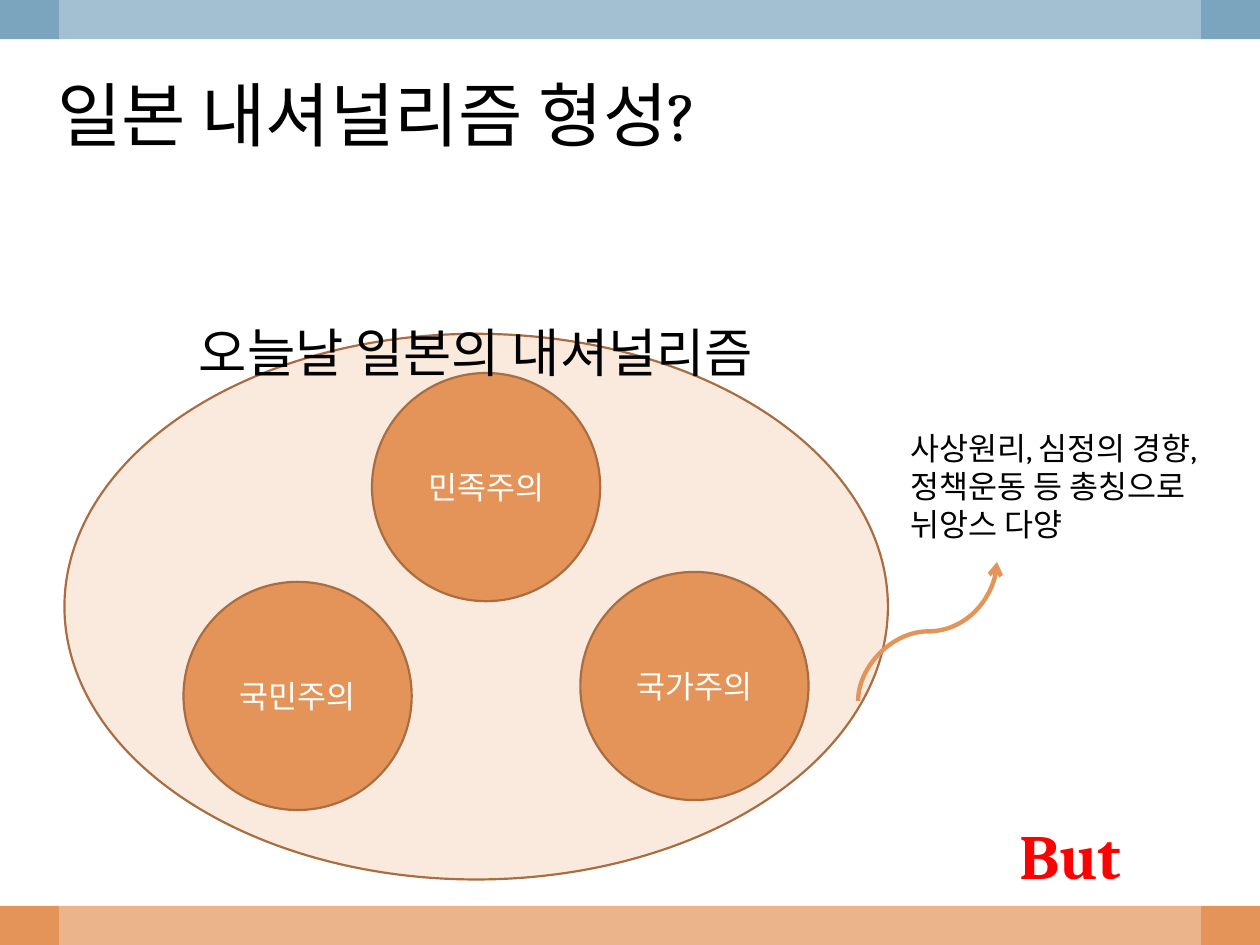
from pptx import Presentation
from pptx import util as u
from pptx.dml.color import RGBColor
from pptx.enum import shapes, text
from pptx.oxml.ns import qn
from lxml import etree

COLORS = {
    "orange": "E49458", "blue": "7BA5BE", "white": "FFFFFF", "black": "000000",
    "cream": "FAEADE", "brown": "A96D41", "red": "FF0000",
}
WIDTH, HEIGHT = 25.4, 19.05
BAND = 0.79
CIRCLE = 4.6


class SlideBuilder:
    """Holds the slide and its style; lengths are in centimetres."""
    font = "Cambria"

    def __init__(self, prs):
        self.s = prs.slides.add_slide(prs.slide_layouts[5])

    def color(self, name):
        return RGBColor.from_string(COLORS[name])

    def set_text(self, sp, words, size, color, align=text.PP_ALIGN.LEFT,
                 anchor=text.MSO_ANCHOR.TOP, bold=False):
        tf = sp.text_frame
        tf.text = words
        tf.word_wrap = True
        tf.auto_size = text.MSO_AUTO_SIZE.NONE
        tf.vertical_anchor = anchor
        p = tf.paragraphs[0]
        p.alignment = align
        font = p.runs[0].font
        font.name, font.size, font.bold = self.font, u.Pt(size), bold
        font.color.rgb = self.color(color)

    def title(self, words, x, y, w, h):
        sp = self.s.shapes.title
        self.s.shapes._spTree.append(sp._element)  # in front of the bands
        sp.left, sp.top, sp.width, sp.height = map(u.Cm, (x, y, w, h))
        self.set_text(sp, words, 40, "black")

    def textbox(self, words, x, y, w, h, size, color="black", **style):
        sp = self.s.shapes.add_textbox(*map(u.Cm, (x, y, w, h)))
        self.set_text(sp, words, size, color, **style)

    def shape(self, kind, x, y, w, h, fill, line=None):
        sp = self.s.shapes.add_shape(kind, *map(u.Cm, (x, y, w, h)))
        sp.shadow.inherit = False
        sp.fill.solid()
        sp.fill.fore_color.rgb = self.color(fill)
        if line:
            sp.line.color.rgb = self.color(line)
            sp.line.width = u.Pt(1.25)
        else:
            sp.line.fill.background()
        return sp

    def band(self, x, y, w, h, fill, opacity=100):
        sp = self.shape(shapes.MSO_SHAPE.RECTANGLE, x, y, w, h, fill)
        if opacity < 100:
            clr = sp._element.spPr.find(".//" + qn("a:srgbClr"))
            etree.SubElement(clr, qn("a:alpha"), val=str(opacity * 1000))

    def ellipse(self, x, y, w, h, fill, words=None):
        sp = self.shape(shapes.MSO_SHAPE.OVAL, x, y, w, h, fill, "brown")
        if words:
            self.set_text(sp, words, 18, "white", text.PP_ALIGN.CENTER,
                          text.MSO_ANCHOR.MIDDLE)

    def rising_curve(self, x, y, side):
        """S-curve from bottom left to top right of a square, arrow on top."""
        c = self.s.shapes.add_connector(
            shapes.MSO_CONNECTOR.CURVE,
            *map(u.Cm, (x + side, y + side, x, y)))
        c.line.color.rgb = self.color("orange")
        c.line.width = u.Pt(2.5)
        spPr = c._element.spPr
        spPr.find(qn("a:xfrm")).set("rot", str(90 * 60000))
        etree.SubElement(spPr.find(qn("a:ln")), qn("a:tailEnd"), type="arrow")
        etree.SubElement(spPr, qn("a:effectLst"))


def main():
    prs = Presentation()
    prs.slide_width, prs.slide_height = u.Cm(WIDTH), u.Cm(HEIGHT)
    b = SlideBuilder(prs)

    b.band(0, HEIGHT - BAND, WIDTH, BAND, "orange")
    b.band(0, 0, WIDTH, BAND, "blue")
    b.band(1.19, 0, WIDTH - 2 * 1.19, HEIGHT, "white", opacity=30)

    b.title("일본 내셔널리즘 형성?", 0.9, 1.32, 14.6, 1.96)
    b.textbox("사상원리, 심정의 경향, 정책운동 등 총칭으로 뉘앙스 다양",
              18.1, 8.53, 7.3, 2.57, 18)

    b.ellipse(1.3, 6.73, 16.6, 11, "cream")
    for words, x, y in (("민족주의", 7.5, 7.52),
                        ("국가주의", 11.7, 11.53),
                        ("국민주의", 3.7, 11.73)):
        b.ellipse(x, y, CIRCLE, CIRCLE, "orange", words)
    b.rising_curve(17.3, 11.33, 2.8)

    b.textbox("오늘날 일본의 내셔널리즘", 3.3, 6.32, 12.6, 5, 30,
              align=text.PP_ALIGN.CENTER)
    b.textbox("But", 20.3, 16.33, 3.2, 1.8, 36, "red", bold=True)

    prs.save("out.pptx")


if __name__ == "__main__":
    main()
